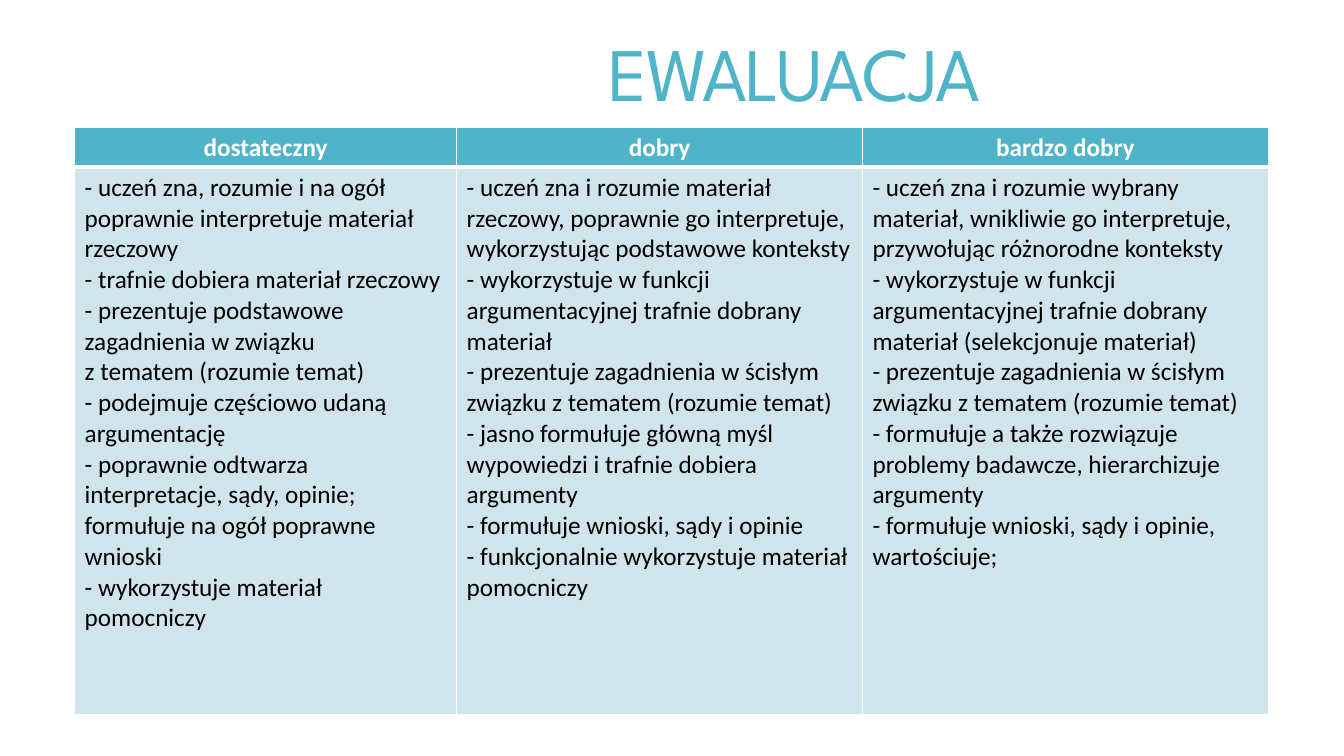
from dataclasses import dataclass

from lxml.etree import SubElement
from pptx import Presentation
from pptx.dml.color import RGBColor as RGB
from pptx.enum.text import MSO_ANCHOR as Anchor, PP_ALIGN as Align
from pptx.oxml.ns import qn
from pptx.util import Inches, Pt


@dataclass(frozen=True)
class Theme:
    accent: str = "50B4C8"
    pale: str = "D0E5EB"
    white: str = "FFFFFF"
    black: str = "000000"
    title_font: str = "League Spartan"
    body_font: str = "Calibri"
    title_size: int = 54
    body_size: int = 18
    thin: int = 1
    thick: int = 3


THEME = Theme()

# Grade -> criteria, one paragraph each
CRITERIA = {
    "dostateczny": [
        "- uczeń zna, rozumie i na ogół poprawnie interpretuje materiał rzeczowy",
        "- trafnie dobiera materiał rzeczowy",
        "- prezentuje podstawowe zagadnienia w związku",
        "z tematem (rozumie temat)",
        "- podejmuje częściowo udaną argumentację",
        "- poprawnie odtwarza interpretacje, sądy, opinie;",
        "formułuje na ogół poprawne wnioski",
        "- wykorzystuje materiał pomocniczy",
    ],
    "dobry": [
        "- uczeń zna i rozumie materiał rzeczowy, poprawnie go interpretuje, "
        "wykorzystując podstawowe konteksty",
        "- wykorzystuje w funkcji argumentacyjnej trafnie dobrany materiał",
        "- prezentuje zagadnienia w ścisłym związku z tematem (rozumie temat)",
        "- jasno formułuje główną myśl wypowiedzi i trafnie dobiera argumenty",
        "- formułuje wnioski, sądy i opinie",
        "- funkcjonalnie wykorzystuje materiał pomocniczy",
    ],
    "bardzo dobry": [
        "- uczeń zna i rozumie wybrany materiał, wnikliwie go interpretuje, "
        "przywołując różnorodne konteksty",
        "- wykorzystuje w funkcji argumentacyjnej trafnie dobrany materiał "
        "(selekcjonuje materiał)",
        "- prezentuje zagadnienia w ścisłym związku z tematem (rozumie temat)",
        "- formułuje a także rozwiązuje problemy badawcze, hierarchizuje argumenty",
        "- formułuje wnioski, sądy i opinie, wartościuje;",
    ],
}


def add_run(p, text, font, size, color, bold=False):
    r = p.add_run()
    r.text = text
    r.font.name, r.font.size, r.font.bold = font, Pt(size), bold
    r.font.color.rgb = RGB.from_string(color)
    return r


def set_borders(cell, **widths):
    """White borders; the lines go before the fill, so call this first."""
    tc_pr = cell._tc.get_or_add_tcPr()
    for side in "LRTB":
        ln = SubElement(tc_pr, qn(f"a:ln{side}"),
                        w=str(Pt(widths.get(side, THEME.thin))))
        fill = SubElement(ln, qn("a:solidFill"))
        SubElement(fill, qn("a:srgbClr"), val=THEME.white)


def fill_cell(cell, lines, fill, color, align, bold, **borders):
    set_borders(cell, **borders)
    cell.fill.solid()
    cell.fill.fore_color.rgb = RGB.from_string(fill)
    tf = cell.text_frame
    for i, line in enumerate(lines):
        p = tf.add_paragraph() if i else tf.paragraphs[0]
        p.alignment = align
        add_run(p, line, THEME.body_font, THEME.body_size, color, bold)


def add_title(s, box, text):
    tf = s.shapes.add_textbox(*box).text_frame
    tf.word_wrap = True
    tf.vertical_anchor = Anchor.MIDDLE
    p = tf.paragraphs[0]
    p.alignment, p.line_spacing = Align.CENTER, 0.85
    r = add_run(p, text, THEME.title_font, THEME.title_size, THEME.accent)
    r.font._element.set("spc", "-120")


def add_criteria_table(s, box, criteria, col_shares, header_height):
    left, top, width, height = box
    table = s.shapes.add_table(2, len(criteria), *box).table
    table.rows[0].height = header_height
    table.rows[1].height = height - header_height
    for i, (grade, lines) in enumerate(criteria.items()):
        table.columns[i].width = int(width * col_shares[i])
        # Header cell, with the thick rule under it
        fill_cell(table.cell(0, i), [grade], THEME.accent, THEME.white,
                  Align.CENTER, True, B=THEME.thick)
        # Criteria cell
        fill_cell(table.cell(1, i), lines, THEME.pale, THEME.black,
                  Align.LEFT, False, T=THEME.thick)


def main():
    prs = Presentation()
    prs.slide_width, prs.slide_height = Inches(13.33), Inches(7.5)
    s = prs.slides.add_slide(prs.slide_layouts[6])

    title_box = [Inches(v) for v in (3.17, 0.58, 9.42, 0.39)]
    table_box = [Inches(v) for v in (0.74, 1.26, 11.84, 5.83)]
    add_title(s, title_box, "EWALUACJA")
    add_criteria_table(s, table_box, CRITERIA, (0.32, 0.34, 0.34), Inches(0.4))
    prs.save("out.pptx")


if __name__ == "__main__":
    main()
